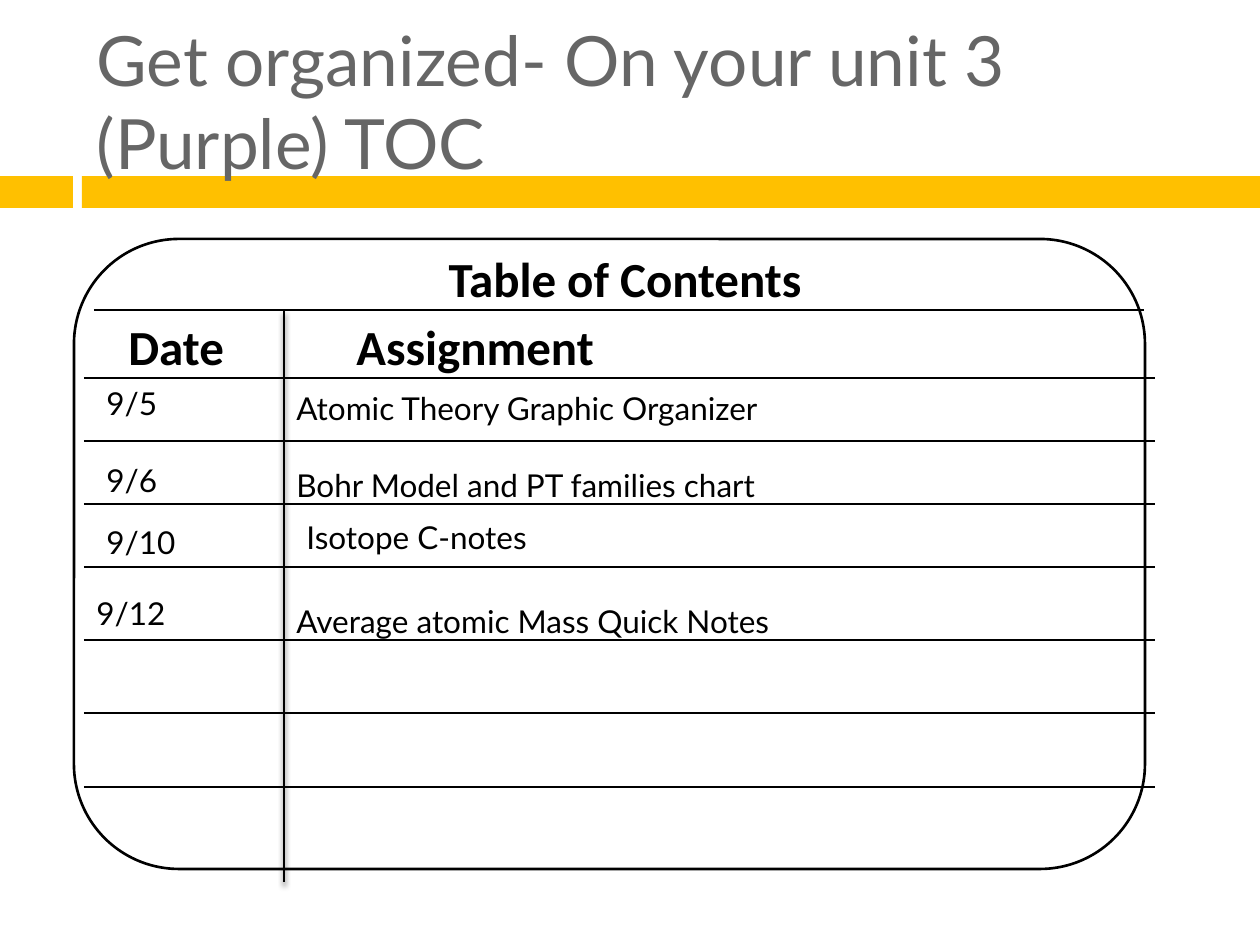
from dataclasses import dataclass

from lxml import etree
from pptx import Presentation
from pptx.dml.color import RGBColor
from pptx.enum.shapes import MSO_CONNECTOR, MSO_SHAPE
from pptx.enum.text import MSO_ANCHOR, MSO_AUTO_SIZE, PP_ALIGN
from pptx.oxml.ns import qn
from pptx.util import Emu, Pt

RECTANGLE, ROUNDED = MSO_SHAPE.RECTANGLE, MSO_SHAPE.ROUNDED_RECTANGLE
STRAIGHT = MSO_CONNECTOR.STRAIGHT
LEFT, CENTER = PP_ALIGN.LEFT, PP_ALIGN.CENTER
EMU_PER_PX = 914400 / 126
BLACK, WHITE, GOLD, GRAY = "000000", "FFFFFF", "FFC000", "666666"
HEADER_TOP, COLUMN_X = 310, 284


@dataclass
class Box:
    left: int
    top: int
    width: int
    height: int


@dataclass
class Entry:
    date: str
    date_left: int
    date_top: int
    assignment: str
    assignment_left: int
    assignment_top: int


ENTRIES = [
    Entry("9/5", 94, 378, "Atomic Theory Graphic Organizer", 284, 383),
    Entry("9/6", 94, 455, "Bohr Model and PT families chart", 284, 460),
    Entry("9/10", 94, 517, "Isotope C-notes", 294, 512),
    Entry("9/12", 84, 588, "Average atomic Mass Quick Notes", 284, 596),
]
RULE_TOPS = [378, 441, 504, 567, 640, 713, 787]


def px(length: int) -> Emu:
    return Emu(round(length * EMU_PER_PX))


def color(value: str) -> RGBColor:
    return RGBColor.from_string(value)


def place(shape, box: Box) -> None:
    shape.left, shape.top = px(box.left), px(box.top)
    shape.width, shape.height = px(box.width), px(box.height)


def write(shape, text: str, font_name: str, size: float, font_color: str,
          bold: bool = False, align: PP_ALIGN = LEFT) -> None:
    frame = shape.text_frame
    frame.word_wrap = True
    frame.auto_size = MSO_AUTO_SIZE.NONE
    frame.text = text
    paragraph = frame.paragraphs[0]
    paragraph.alignment = align
    font = paragraph.font
    font.name, font.size, font.bold = font_name, Pt(size), bold
    font.color.rgb = color(font_color)


def add_heading(slide, text: str, box: Box, align: PP_ALIGN = LEFT) -> None:
    heading = slide.shapes.add_textbox(0, 0, 0, 0)
    place(heading, box)
    write(heading, text, "Calibri", 28, BLACK, True, align)


def add_cell(slide, text: str, left: int, top: int, width: int) -> None:
    cell = slide.shapes.add_textbox(0, 0, 0, 0)
    place(cell, Box(left, top, width, 50))
    write(cell, text, "Lato", 18, BLACK)


def add_filled(slide, preset: MSO_SHAPE, box: Box, fill: str):
    shape = slide.shapes.add_shape(preset, 0, 0, 0, 0)
    place(shape, box)
    shape.shadow.inherit = False
    shape.fill.solid()
    shape.fill.fore_color.rgb = color(fill)
    shape.line.fill.background()
    return shape


def add_rule(slide, x1: int, y1: int, x2: int, y2: int):
    """Draw a black line and return its empty effect list."""
    rule = slide.shapes.add_connector(STRAIGHT, px(x1), px(y1), px(x2), px(y2))
    rule.line.color.rgb = color(BLACK)
    rule.line.width = Pt(1.5)
    return etree.SubElement(rule.element.spPr, qn("a:effectLst"))


def add_soft_shadow(effects) -> None:
    shadow = etree.SubElement(effects, qn("a:outerShdw"), blurRad=str(Pt(3)),
                              dist=str(Pt(2.4)), dir="5400000", rotWithShape="0")
    tint = etree.SubElement(shadow, qn("a:srgbClr"), val=BLACK)
    etree.SubElement(tint, qn("a:alpha"), val="45000")


def main() -> None:
    presentation = Presentation()
    presentation.slide_width, presentation.slide_height = px(1260), px(945)
    slide = presentation.slides.add_slide(presentation.slide_layouts[5])

    title = slide.shapes.title
    place(title, Box(84, 32, 1124, 136))
    write(title, "Get organized- On your unit 3 (Purple) TOC", "Lato", 39.6, GRAY)
    title.text_frame.vertical_anchor = MSO_ANCHOR.MIDDLE
    for left, width in ((0, 73), (82, 1178)):
        bar = add_filled(slide, RECTANGLE, Box(left, 176, width, 32), GOLD)
        title.element.addprevious(bar.element)  # the title overlaps the bars

    panel = add_filled(slide, ROUNDED, Box(74, 239, 1071, 630), WHITE)
    panel.line.color.rgb = color(BLACK)
    panel.line.width = Pt(1.5)

    add_heading(slide, "Table of Contents", Box(231, 242, 788, 32), CENTER)
    add_heading(slide, "Date", Box(116, HEADER_TOP, 160, 48))
    add_heading(slide, "Assignment", Box(344, HEADER_TOP, 560, 48))

    add_rule(slide, 94, HEADER_TOP, 1144, HEADER_TOP)
    for top in RULE_TOPS:
        add_rule(slide, 84, top, 1155, top)
    add_soft_shadow(add_rule(slide, COLUMN_X, HEADER_TOP, COLUMN_X, 882))

    for entry in ENTRIES:
        add_cell(slide, entry.date, entry.date_left, entry.date_top, 189)
        add_cell(slide, entry.assignment, entry.assignment_left,
                 entry.assignment_top, 861)

    presentation.save("out.pptx")


if __name__ == "__main__":
    main()
